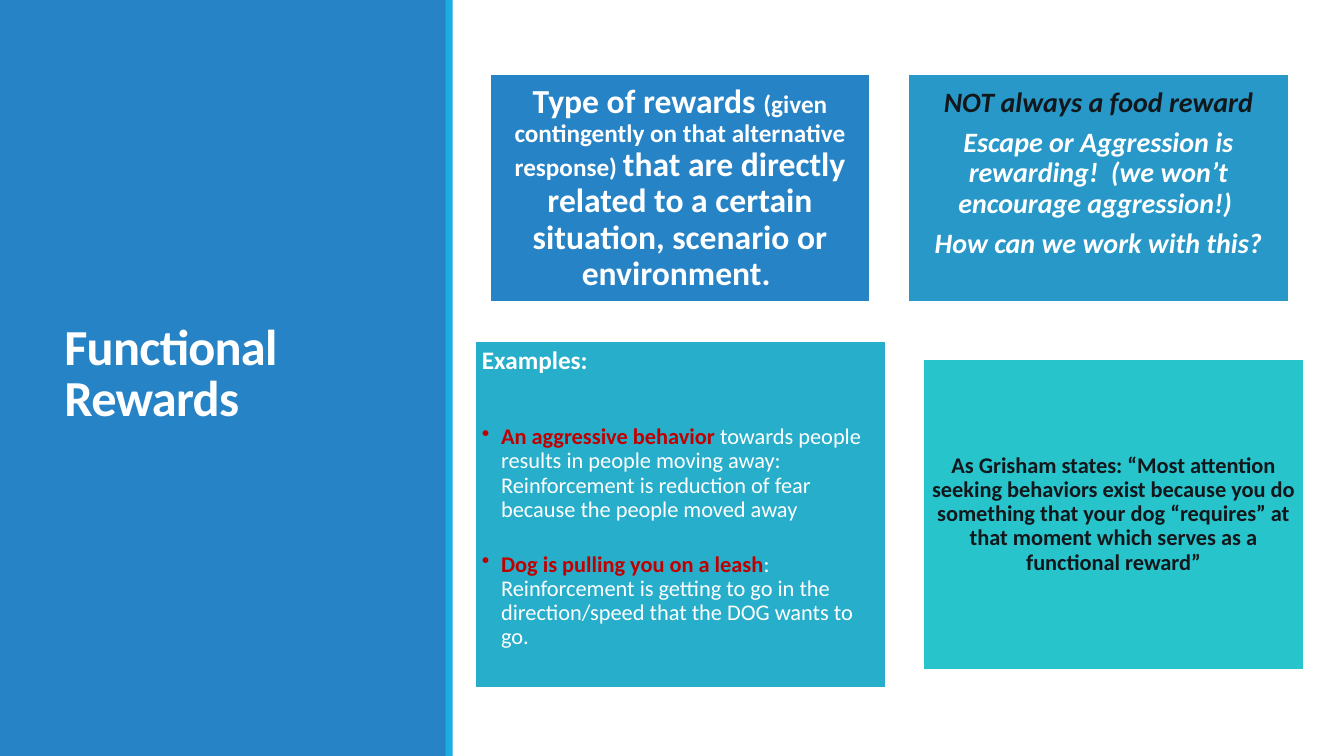
import pptx
import pptx.dml.color
import pptx.enum.shapes
import pptx.enum.text
import pptx.oxml.ns
import pptx.util
from lxml import etree

Inches = pptx.util.Inches
Pt = pptx.util.Pt
ALIGN = pptx.enum.text.PP_ALIGN
ANCHOR = pptx.enum.text.MSO_ANCHOR

FONT = "Calibri"
COLOURS = {
    "white": "FFFFFF", "ink": "12171B", "red": "C00000",
    "panel": "2683C6", "stripe": "1CADE4",
    "rewards": "2683C6", "food": "2798C8", "examples": "27AECA", "quote": "28C4CC",
}

TITLE = [{"runs": [("Functional Rewards", 36, "white", "b")], "line": 0.85, "tracking": -50}]
REWARDS = [{"align": ALIGN.CENTER, "runs": [
    ("Type of rewards ", 24, "white", "b"),
    ("(given contingently on that alternative response) ", 18, "white", "b"),
    ("that are directly related to a certain situation, scenario or environment. ", 24, "white", "b"),
]}]
FOOD = [
    {"align": ALIGN.CENTER, "after": 7, "runs": [(text, 20, colour, "bi")]}
    for text, colour in [
        ("NOT always a food reward", "ink"),
        ("Escape or Aggression is rewarding!  (we won’t encourage aggression!) ", "white"),
        ("How can we work with this?", "white"),
    ]
]
EXAMPLES = [
    {"after": 36, "runs": [("Examples:", 18, "white", "b")]},
    {"after": 22, "bullet": True, "runs": [
        ("An aggressive behavior ", 16, "red", "b"),
        ("towards people results in people moving away: Reinforcement is reduction of fear "
         "because the people moved away", 16, "white", ""),
    ]},
    {"bullet": True, "runs": [
        ("Dog is pulling you on a leash", 16, "red", "b"),
        (": Reinforcement is getting to go in the direction/speed that the DOG wants to go.",
         16, "white", ""),
    ]},
]
QUOTE = [{"align": ALIGN.CENTER, "runs": [
    ("As Grisham states: “Most attention seeking behaviors exist because you do something "
     "that your dog “requires” at that moment which serves as a functional reward”",
     16, "ink", "b"),
]}]

BARS = [("panel", (0, 0, 4.43, 7.5)), ("stripe", (4.42, 0, 0.07, 7.5))]
CARDS = [
    ("rewards", (4.86, 0.74, 3.77, 2.26), REWARDS, ANCHOR.MIDDLE, 0.1, 0.1),
    ("food", (9.01, 0.74, 3.77, 2.26), FOOD, ANCHOR.MIDDLE, 0.08, 0.37),
    ("examples", (4.71, 3.38, 4.08, 3.44), EXAMPLES, ANCHOR.TOP, 0.07, 0.07),
    ("quote", (9.16, 3.56, 3.77, 3.09), QUOTE, ANCHOR.MIDDLE, 0.07, 0.07),
]


def rgb(name):
    """Return the named colour."""
    return pptx.dml.color.RGBColor.from_string(COLOURS[name])


def add_block(slide, colour, box):
    """Add a plain filled rectangle."""
    shape = slide.shapes.add_shape(
        pptx.enum.shapes.MSO_SHAPE.RECTANGLE, *(Inches(length) for length in box))
    shape.shadow.inherit = False
    shape.fill.solid()
    shape.fill.fore_color.rgb = rgb(colour)
    shape.line.fill.background()
    return shape


def add_bullet(paragraph):
    """Give a paragraph a hanging bullet."""
    properties = paragraph._p.get_or_add_pPr()
    indent = Inches(0.19)
    properties.set("marL", str(indent))
    properties.set("indent", str(-indent))
    bullet = etree.SubElement(properties, pptx.oxml.ns.qn("a:buChar"))
    bullet.set("char", "•")


def write(shape, paragraphs, anchor, inset, bottom):
    """Fill a shape with formatted paragraphs."""
    frame = shape.text_frame
    frame.word_wrap = True
    frame.vertical_anchor = anchor
    frame.margin_left = frame.margin_right = frame.margin_top = Inches(inset)
    frame.margin_bottom = Inches(bottom)
    for index, content in enumerate(paragraphs):
        paragraph = frame.add_paragraph() if index else frame.paragraphs[0]
        paragraph.alignment = content.get("align", ALIGN.LEFT)
        paragraph.line_spacing = content.get("line", 0.9)
        paragraph.space_after = Pt(content.get("after", 0))
        if content.get("bullet"):
            add_bullet(paragraph)
        for text, size, colour, style in content["runs"]:
            run = paragraph.add_run()
            run.text = text
            run.font.name = FONT
            run.font.size = Pt(size)
            run.font.color.rgb = rgb(colour)
            run.font.bold = "b" in style
            run.font.italic = "i" in style
            if "tracking" in content:
                run._r.get_or_add_rPr().set("spc", str(content["tracking"]))


def main():
    """Build the functional rewards slide."""
    presentation = pptx.Presentation()
    presentation.slide_width = Inches(13.33)
    presentation.slide_height = Inches(7.5)
    slide = presentation.slides.add_slide(presentation.slide_layouts[6])

    for colour, box in BARS:
        add_block(slide, colour, box)
    title = slide.shapes.add_textbox(Inches(0.54), Inches(0.57), Inches(3.37), Inches(6.31))
    write(title, TITLE, ANCHOR.MIDDLE, 0.1, 0.1)

    for colour, box, paragraphs, anchor, inset, bottom in CARDS:
        card = add_block(slide, colour, box)
        card.line.color.rgb = rgb("white")
        card.line.width = Pt(1.25)
        write(card, paragraphs, anchor, inset, bottom)

    presentation.save("out.pptx")


if __name__ == "__main__":
    main()
